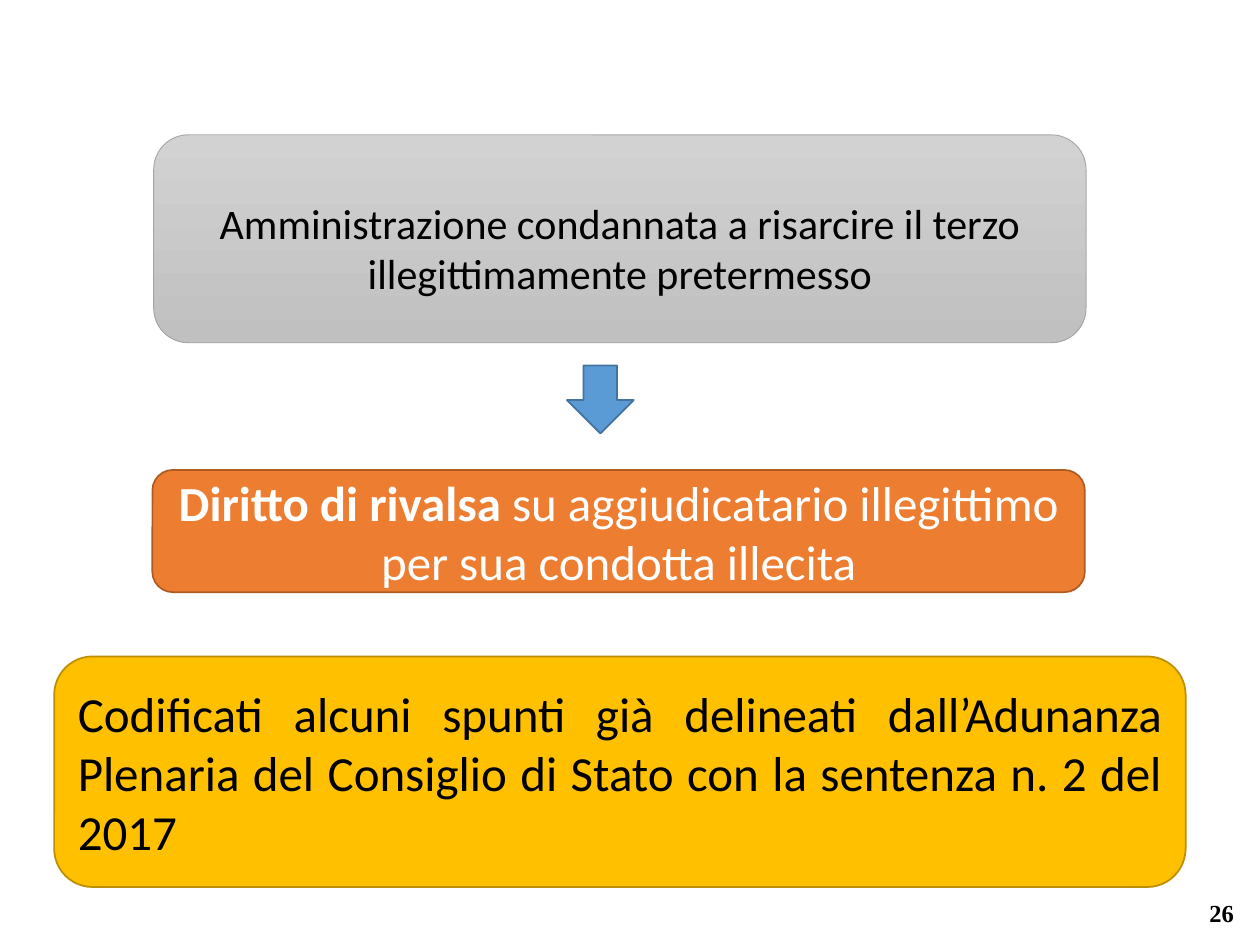
"""Build the slide on the administration's right of recourse."""
from pptx import Presentation, util as u
from pptx.dml.color import RGBColor
from pptx.enum import shapes, text

COLOURS = {
    "black": "000000", "white": "FFFFFF",
    "light grey": "D2D2D2", "dark grey": "C0C0C0", "grey line": "A5A5A5",
    "orange": "ED7D31", "orange line": "AF5C24",
    "blue": "5B9BD5", "blue line": "43739E",
    "gold": "FFC000", "gold line": "BD8E00",
}

deck = Presentation()
deck.slide_width, deck.slide_height = u.Inches(10), u.Inches(7.5)
column, row = deck.slide_width / 100, deck.slide_height / 100
page = deck.slides.add_slide(deck.slide_layouts[6])


def add_block(kind, place, fill, line, width):
    left, top, across, down = place
    block = page.shapes.add_shape(kind, int(left * column), int(top * row),
                                  int(across * column), int(down * row))
    block.shadow.inherit = False
    if len(fill) == 1:
        block.fill.solid()
        block.fill.fore_color.rgb = RGBColor.from_string(COLOURS[fill[0]])
    else:
        block.fill.gradient()
        block.fill.gradient_angle = 270
        for stop, name in zip(block.fill.gradient_stops, fill):
            stop.color.rgb = RGBColor.from_string(COLOURS[name])
    block.line.color.rgb = RGBColor.from_string(COLOURS[line])
    block.line.width = u.Pt(width)
    return block


def write(box, spans, size, colour, align, font="Calibri"):
    frame = box.text_frame
    frame.word_wrap = True
    frame.vertical_anchor = text.MSO_ANCHOR.MIDDLE
    para = frame.paragraphs[0]
    para.alignment = align
    for words, bold in spans:
        span = para.add_run()
        span.text = words
        span.font.name, span.font.size, span.font.bold = font, u.Pt(size), bold
        span.font.color.rgb = RGBColor.from_string(COLOURS[colour])


rounded = shapes.MSO_SHAPE.ROUNDED_RECTANGLE
align = text.PP_ALIGN

ruling = add_block(rounded, (12.2, 14.27, 74, 22), ("light grey", "dark grey"), "grey line", 0.5)
write(ruling, [("Amministrazione condannata a risarcire il terzo illegittimamente pretermesso", False)],
      24, "black", align.CENTER)
ruling.text_frame.margin_top = u.Inches(0.19)

recourse = add_block(rounded, (12.1, 49.73, 74, 12.93), ("orange",), "orange line", 1)
write(recourse, [("Diritto di rivalsa ", True),
                 ("su aggiudicatario illegittimo per sua condotta illecita", False)],
      28, "white", align.CENTER)

add_block(shapes.MSO_SHAPE.DOWN_ARROW, (45, 38.67, 5.3, 7.2), ("blue",), "blue line", 1)

precedent = add_block(rounded, (4.3, 69.47, 89.8, 24.4), ("gold",), "gold line", 1)
write(precedent, [("Codificati alcuni spunti già delineati dall’Adunanza Plenaria "
                   "del Consiglio di Stato con la sentenza n. 2 del 2017", False)],
      28, "black", align.JUSTIFY)

number = page.shapes.add_textbox(int(76.4 * column), int(93.87 * row),
                                 int(22.5 * column), int(5.33 * row))
write(number, [("26", True)], 14, "black", align.RIGHT, "Times New Roman")

deck.save("out.pptx")
